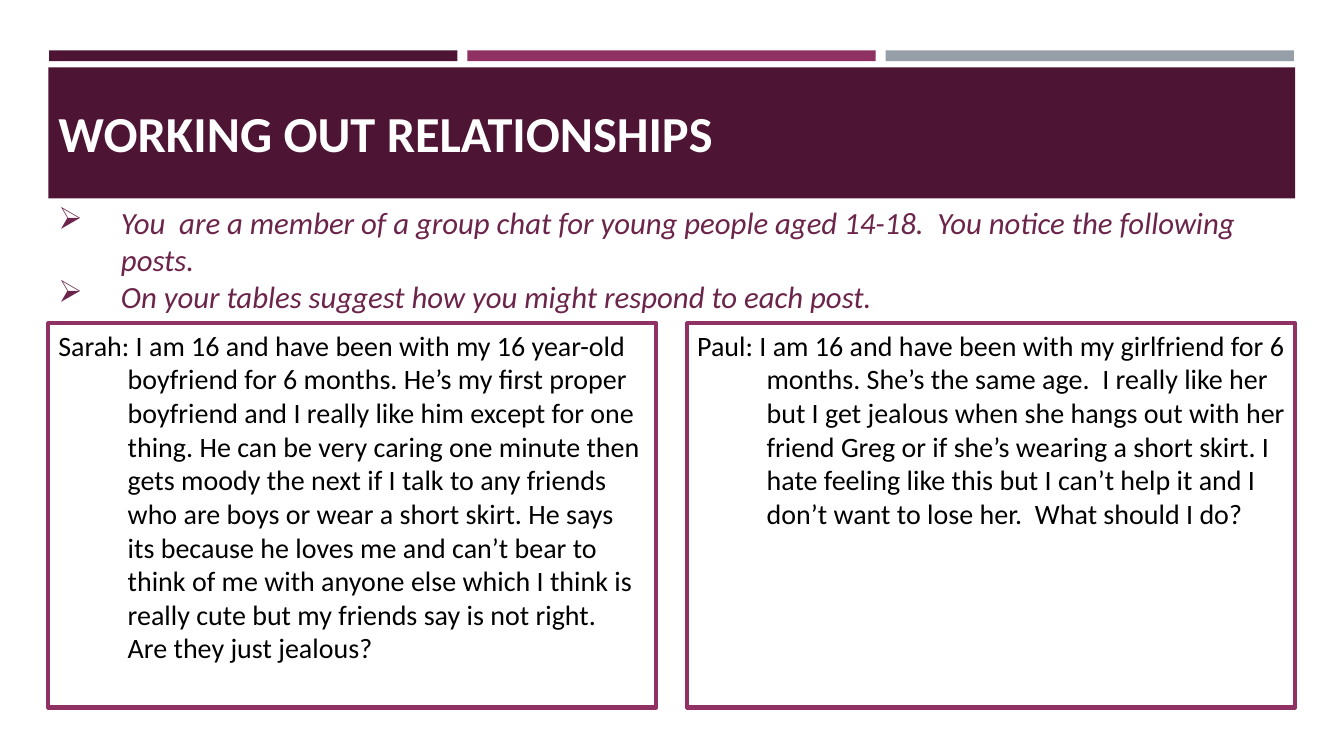
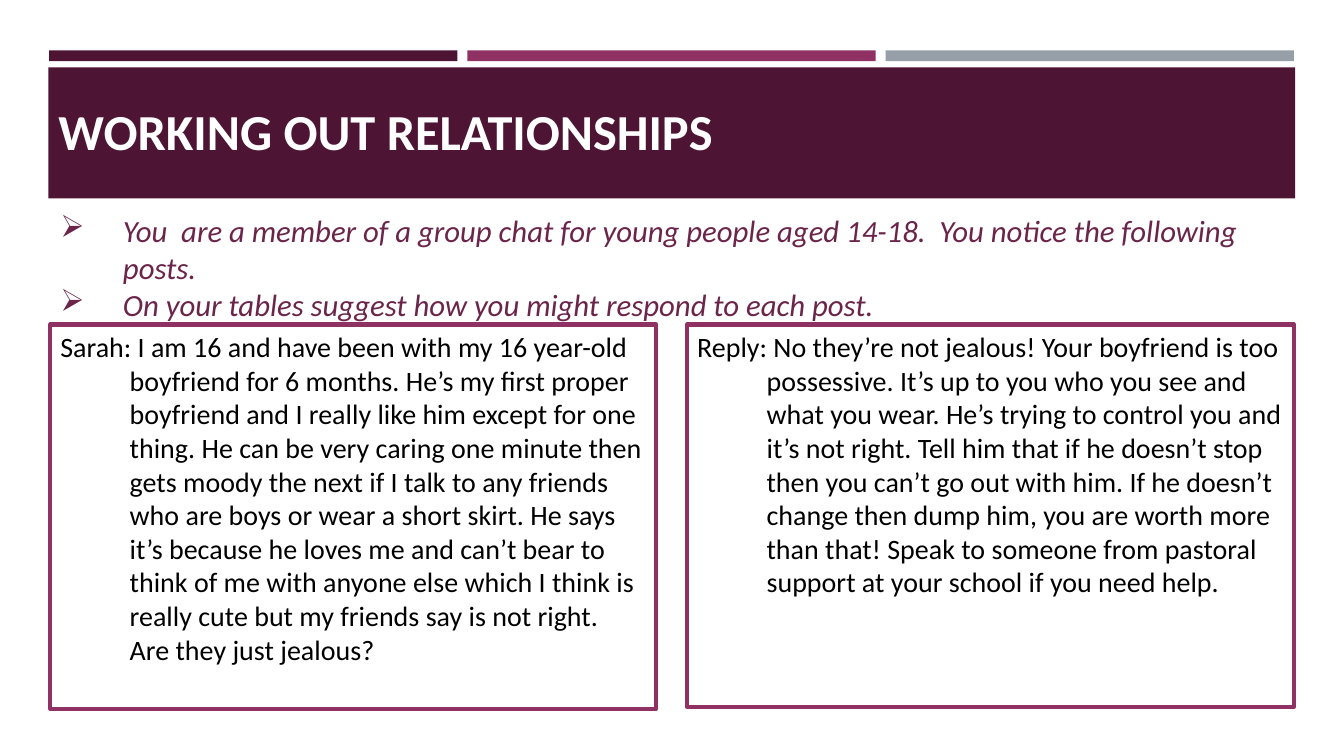
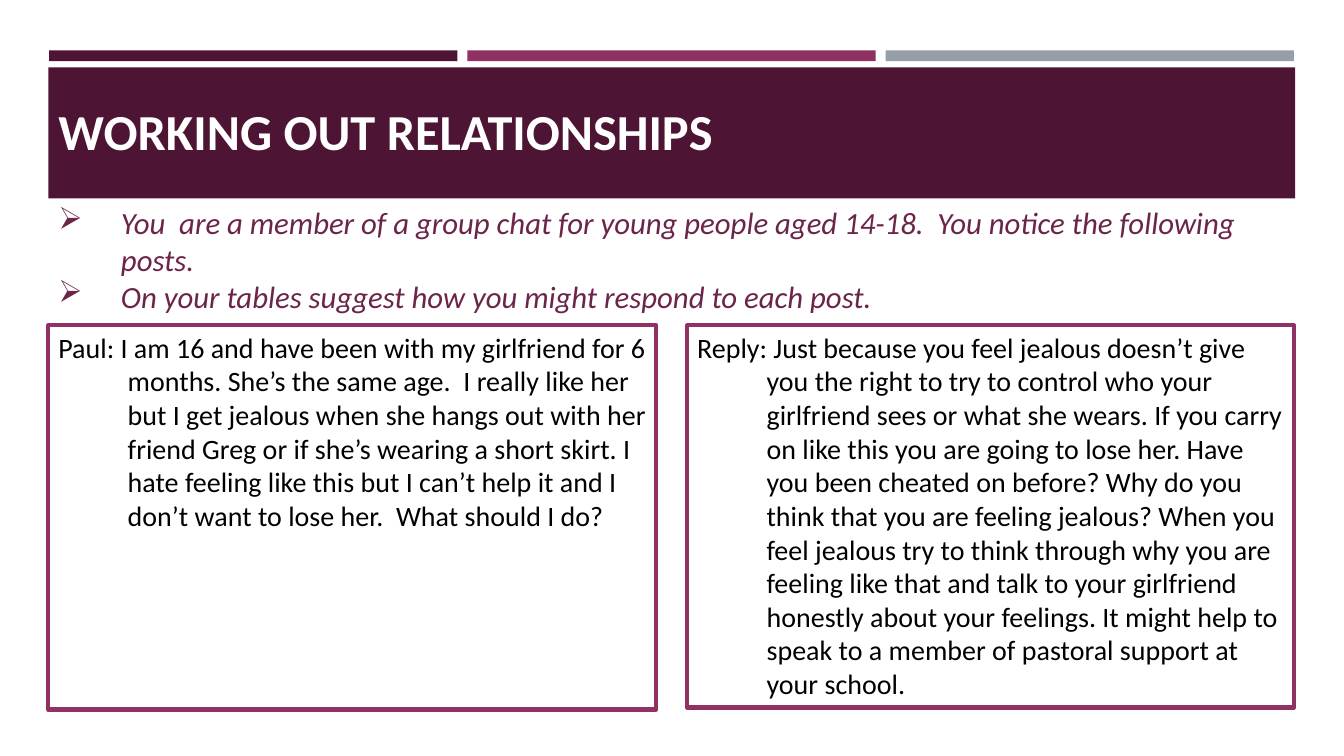
from dataclasses import dataclass

from lxml.etree import SubElement
from pptx import Presentation
from pptx.dml.color import RGBColor
from pptx.enum.shapes import MSO_SHAPE, PP_PLACEHOLDER
from pptx.enum.text import MSO_ANCHOR, MSO_AUTO_SIZE, PP_ALIGN
from pptx.oxml.ns import qn
from pptx.util import Cm, Pt


@dataclass(frozen=True)
class Theme:
    font: str = "Calibri"
    plum: str = "4D1434"
    berry: str = "903163"
    grey: str = "969FA7"
    brief: str = "6C254A"
    black: str = "000000"
    white: str = "FFFFFF"
    title_size: int = 36
    brief_size: int = 22
    post_size: int = 20
    border: int = 3


THEME = Theme()
TITLE = "WORKING OUT RELATIONSHIPS"
BRIEF = [
    "You  are a member of a group chat for young people aged 14-18.  "
    "You notice the following posts.",
    "On your tables suggest how you might respond to each post.",
]
SARAH = (
    "Sarah: I am 16 and have been with my 16 year-old boyfriend for 6 months. "
    "He’s my first proper boyfriend and I really like him except for one thing. "
    "He can be very caring one minute then gets moody the next if I talk to any "
    "friends who are boys or wear a short skirt. He says {its} because he loves me "
    "and can’t bear to think of me with anyone else which I think is really cute "
    "but my friends say is not right.  Are they just jealous?"
)
PAUL = (
    "Paul: I am 16 and have been with my girlfriend for 6 months. She’s the same "
    "age.  I really like her but I get jealous when she hangs out with her friend "
    "Greg or if she’s wearing a short skirt. I hate feeling like this but I can’t "
    "help it and I don’t want to lose her.  What should I do?"
)
REPLY_TO_SARAH = (
    "Reply: No they’re not jealous! Your boyfriend is too possessive. It’s up to "
    "you who you see and what you wear. He’s trying to control you and it’s not "
    "right. Tell him that if he doesn’t stop then you can’t go out with him. If he "
    "doesn’t change then dump him, you are worth more than that! Speak to someone "
    "from pastoral support at your school if you need help."
)
REPLY_TO_PAUL = (
    "Reply: Just because you feel jealous doesn’t give you the right to try to "
    "control who your girlfriend sees or what she wears. If you carry on like this "
    "you are going to lose her. Have you been cheated on before? Why do you think "
    "that you are feeling jealous? When you feel jealous try to think through why "
    "you are feeling like that and talk to your girlfriend honestly about your "
    "feelings. It might help to speak to a member of pastoral support at your school."
)


def rgb(value):
    return RGBColor.from_string(value)


def cm(*lengths):
    return [Cm(length) for length in lengths]


def write(tf, paragraphs, *, size, color, bold=False, italic=False,
          anchor=MSO_ANCHOR.TOP, hanging=0, bullet=None):
    """Fill a text frame; hanging is the indent in cm of all but first lines."""
    tf.word_wrap = True
    tf.vertical_anchor = anchor
    for i, text in enumerate(paragraphs):
        p = tf.add_paragraph() if i else tf.paragraphs[0]
        p.alignment = PP_ALIGN.LEFT
        r = p.add_run()
        r.text = text
        font = r.font
        font.name, font.size, font.color.rgb = THEME.font, Pt(size), rgb(color)
        font.bold, font.italic = bold, italic
        if hanging:
            pPr = p._p.get_or_add_pPr()
            pPr.set("marL", str(Cm(hanging)))
            pPr.set("indent", str(-Cm(hanging)))
            if bullet:
                SubElement(pPr, qn("a:buChar")).set("char", bullet)


def add_rect(s, box, fill=None, line=None):
    sp = s.shapes.add_shape(MSO_SHAPE.RECTANGLE, *cm(*box))
    sp.shadow.inherit = False
    if fill:
        sp.fill.solid()
        sp.fill.fore_color.rgb = rgb(fill)
    else:
        sp.fill.background()
    if line:
        sp.line.color.rgb = rgb(line)
        sp.line.width = Pt(THEME.border)
    else:
        sp.line.fill.background()
    return sp


def add_bands_to_layout(prs, layout):
    """Draw the bands on a passing slide, then move them into the layout."""
    for ph in list(layout.placeholders):
        if ph.placeholder_format.type != PP_PLACEHOLDER.TITLE:
            ph.element.getparent().remove(ph.element)
    s = prs.slides[0]
    width, gap = 10.29, 0.25
    bands = [add_rect(s, (1.24 + i * (width + gap), 1.27, width, 0.27), fill)
             for i, fill in enumerate((THEME.plum, THEME.berry, THEME.grey))]
    bands.append(add_rect(s, (1.22, 1.7, 31.42, 3.3), THEME.plum))
    for band in bands:
        layout.shapes.element.append(band.element)


def set_title(s, height):
    title = s.shapes.title
    title.left, title.top, title.width, title.height = cm(1.22, 1.65, 31.4, height)
    write(title.text_frame, [TITLE], size=THEME.title_size, color=THEME.white,
          bold=True, anchor=MSO_ANCHOR.MIDDLE)


def add_brief(s, left, top):
    tf = s.shapes.add_textbox(*cm(left, top, 31.37, 2.13)).text_frame
    write(tf, BRIEF, size=THEME.brief_size, color=THEME.brief, italic=True,
          hanging=1.58, bullet="➢")
    tf.auto_size = MSO_AUTO_SIZE.SHAPE_TO_FIT_TEXT


def add_post(s, text, box):
    sp = add_rect(s, box, line=THEME.berry)
    write(sp.text_frame, [text], size=THEME.post_size, color=THEME.black, hanging=1.75)


def add_chat_slide(s, left_post, right_post, *, title_height=3.25, left=1.22,
                   brief_top=5.0, posts_top=8.15, right_size=(15.29, 9.63)):
    set_title(s, title_height)
    add_brief(s, left, brief_top)
    add_post(s, left_post, (left, posts_top, 16.54 - left, 9.68))
    add_post(s, right_post, (17.32, posts_top, *right_size))


def main():
    prs = Presentation()
    prs.slide_width, prs.slide_height = cm(33.87, 19.05)
    layout = prs.slide_layouts[5]
    slides = [prs.slides.add_slide(layout) for _ in range(3)]
    add_bands_to_layout(prs, layout)
    add_chat_slide(slides[0], SARAH.format(its="its"), PAUL,
                   title_height=3.35, right_size=(15.32, 9.68))
    add_chat_slide(slides[1], SARAH.format(its="it’s"), REPLY_TO_SARAH,
                   left=1.27, brief_top=5.21, posts_top=8.18)
    add_chat_slide(slides[2], PAUL, REPLY_TO_PAUL, posts_top=8.2)
    prs.save("out.pptx")


if __name__ == "__main__":
    main()
